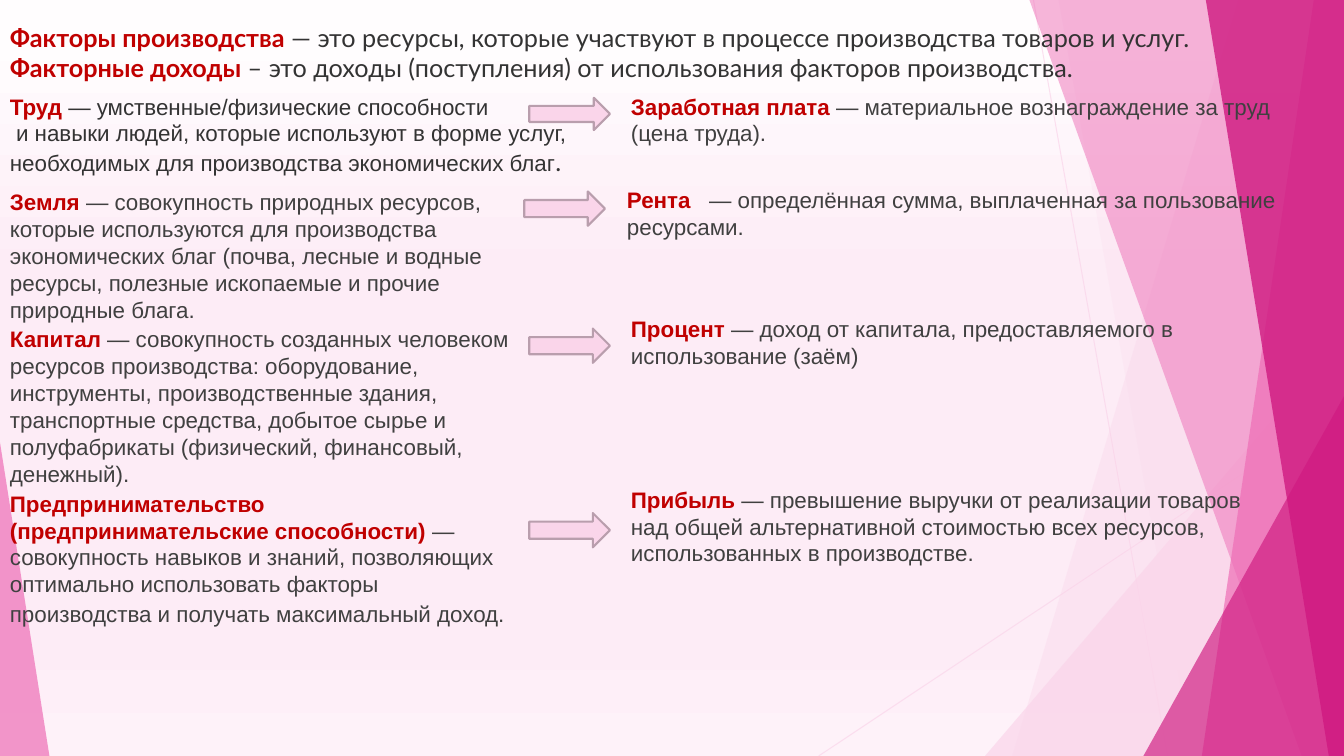
from copy import deepcopy
from pptx import Presentation, util as u
from pptx.dml.color import RGBColor
from pptx.enum import shapes, text
from pptx.oxml.ns import qn
from lxml import etree

WIDTH, HEIGHT = 13.33, 7.5
PALE, PINK, MAGENTA = "FAD5EA", "EE6EB6", "CF1980"
RED, DARK, GREY = "C00000", "333333", "404040"

presentation = Presentation()
presentation.slide_width, presentation.slide_height = u.Inches(WIDTH), u.Inches(HEIGHT)
slide = presentation.slides.add_slide(presentation.slide_layouts[6])


def paint(color_format, color, alpha=100):
    color_format.rgb = RGBColor.from_string(color)
    if alpha < 100:
        # the colour is the only srgbClr inside its solid fill
        solid = color_format._xFill if hasattr(color_format, "_xFill") else color_format
        for node in solid.iter(qn("a:srgbClr")):
            etree.SubElement(node, qn("a:alpha")).set("val", str(alpha * 1000))


def add_text(left, top, width, height, paragraphs, size, font):
    """Each paragraph is a list of (words, colour, large) runs; red runs are bold."""
    box = slide.shapes.add_textbox(*map(u.Inches, (left, top, width, height)))
    frame = box.text_frame
    frame.word_wrap = True
    frame.auto_size = text.MSO_AUTO_SIZE.SHAPE_TO_FIT_TEXT
    for index, runs in enumerate(paragraphs):
        paragraph = frame.add_paragraph() if index else frame.paragraphs[0]
        for words, color, large in runs:
            run = paragraph.add_run()
            run.text = words
            run.font.size = u.Pt(18 if large else size)
            run.font.name = "Lato" if large else font
            run.font.bold = color == RED
            paint(run.font.color, color)


# Background gradient, top to bottom
background = slide.background.fill
background.gradient()
background.gradient_angle = 270
stop_list = slide.element.xpath(".//a:gsLst")[0]
for _ in range(2):
    stop_list.append(deepcopy(stop_list[0]))
stops = [(0.04, "FFFDFE"), (0.37, "FDECF6"), (0.83, "FDECF6"), (1, "FEF2F9")]
for stop, (position, color) in zip(background.gradient_stops, stops):
    stop.position = position
    paint(stop.color, color)

# Thin rays behind the facets
for ray in [(10.25, 0, 11.58, HEIGHT), (WIDTH, 4.03, 8.12, HEIGHT)]:
    connector = slide.shapes.add_connector(shapes.MSO_CONNECTOR.STRAIGHT, *map(u.Inches, ray))
    connector.line.width = u.Pt(0.75)
    paint(connector.line.color, PALE)
    for node in connector.line.fill._xPr.iter(qn("a:srgbClr")):
        etree.SubElement(node, qn("a:alpha")).set("val", "70000")
    etree.SubElement(connector._element.spPr, qn("a:effectLst"))

# Facets: a full-height one has a top and a bottom left corner,
# a triangle has left, top, width and the side of its apex
facets = [
    ((12.28, 10.04), PALE, 36),
    ((10.5, 11.83), PALE, 20),
    ((9.77, 3.33, 3.56, 1), PALE, 72),
    ((10.21, 12.91), PINK, 50),
    ((13.03, 11.92), PINK, 70),
    ((11.96, 13.18), MAGENTA, 80),
    ((11.34, 3.93, 1.99, 1), MAGENTA, 66),
    ((0, 4.39, 0.49, 0), PINK, 70),
]
for outline, color, alpha in facets:
    if len(outline) == 2:
        upper, lower = outline
        builder = slide.shapes.build_freeform(u.Inches(upper), 0)
        corners = [(WIDTH, 0), (WIDTH, HEIGHT), (lower, HEIGHT)]
        builder.add_line_segments([(u.Inches(x), u.Inches(y)) for x, y in corners])
        shape = builder.convert_to_shape()
    else:
        left, top, width, apex = outline
        shape = slide.shapes.add_shape(shapes.MSO_SHAPE.ISOSCELES_TRIANGLE,
                                       *map(u.Inches, (left, top, width, HEIGHT - top)))
        shape.adjustments[0] = apex
    shape.shadow.inherit = False
    shape.line.fill.background()
    shape.fill.solid()
    paint(shape.fill.fore_color, color)
    for node in shape._element.spPr.iter(qn("a:srgbClr")):
        etree.SubElement(node, qn("a:alpha")).set("val", str(alpha * 1000))

# Definitions at the top
add_text(0, 0.17, 13.2, 0.71, [
    [("Факторы производства", RED, False),
     (" — это ресурсы, которые участвуют в процессе производства товаров и услуг.", DARK, False)],
    [("Факторные доходы", RED, False),
     (" – это доходы (поступления) от использования факторов производства.", DARK, False)],
], 18, "Lato")

# Rows: factor (top, width, height, term, lines, large ending, colour),
# arrow (left, top, height), income (left, top, height, term, meaning)
rows = [
    ((0.87, WIDTH, 0.94, "Труд", [
        " — умственные/физические способности",
        " и навыки людей, которые используют в форме услуг,",
        "необходимых для производства экономических благ"], ".", DARK),
     (5.25, 0.97, 0.32),
     (6.16, 0.87, 0.64, "Заработная плата",
      " — материальное вознаграждение за труд (цена труда).")),
    ((1.82, 5.58, 1.45, "Земля", [
        " — совокупность природных ресурсов, которые используются для производства "
        "экономических благ (почва, лесные и водные ресурсы, полезные ископаемые и "
        "прочие природные блага."], "", GREY),
     (5.2, 1.9, 0.34),
     (6.12, 1.8, 0.64, "Рента ",
      "  — определённая сумма, выплаченная за пользование ресурсами. ")),
    ((3.18, 5.25, 1.72, "Капитал", [
        " — совокупность созданных человеком",
        "ресурсов производства: оборудование,",
        "инструменты, производственные здания,",
        "транспортные средства, добытое сырье и",
        "полуфабрикаты (физический, финансовый,",
        "денежный)."], "", GREY),
     (5.25, 3.26, 0.34),
     (6.16, 3.08, 0.64, "Процент",
      " — доход от капитала, предоставляемого в использование (заём)")),
    ((4.81, 5.25, 1.48, "Предпринимательство (предпринимательские способности) ", [
        "— совокупность навыков и знаний, позволяющих оптимально использовать факторы "
        "производства и получать максимальный доход."], " ", GREY),
     (5.25, 5.09, 0.34),
     (6.16, 4.77, 0.91, "Прибыль",
      " — превышение выручки от реализации товаров над общей альтернативной "
      "стоимостью всех ресурсов, использованных в производстве. ")),
]
for factor, (arrow_left, arrow_top, arrow_height), income in rows:
    top, width, height, term, lines, ending, color = factor
    paragraphs = [[(line, color, False)] for line in lines]
    paragraphs[0].insert(0, (term, RED, False))
    if ending:
        paragraphs[-1].append((ending, color, True))
    add_text(0, top, width, height, paragraphs, 16, "Arial")

    arrow = slide.shapes.add_shape(shapes.MSO_SHAPE.RIGHT_ARROW,
                                   *map(u.Inches, (arrow_left, arrow_top, 0.8, arrow_height)))
    arrow.shadow.inherit = False
    arrow.fill.solid()
    paint(arrow.fill.fore_color, PALE)
    paint(arrow.line.color, "B99EAD")
    arrow.line.width = u.Pt(1.5)

    left, top, height, term, meaning = income
    add_text(left, top, 6.67, height, [[(term, RED, False), (meaning, GREY, False)]], 16, "Arial")

presentation.save("out.pptx")
